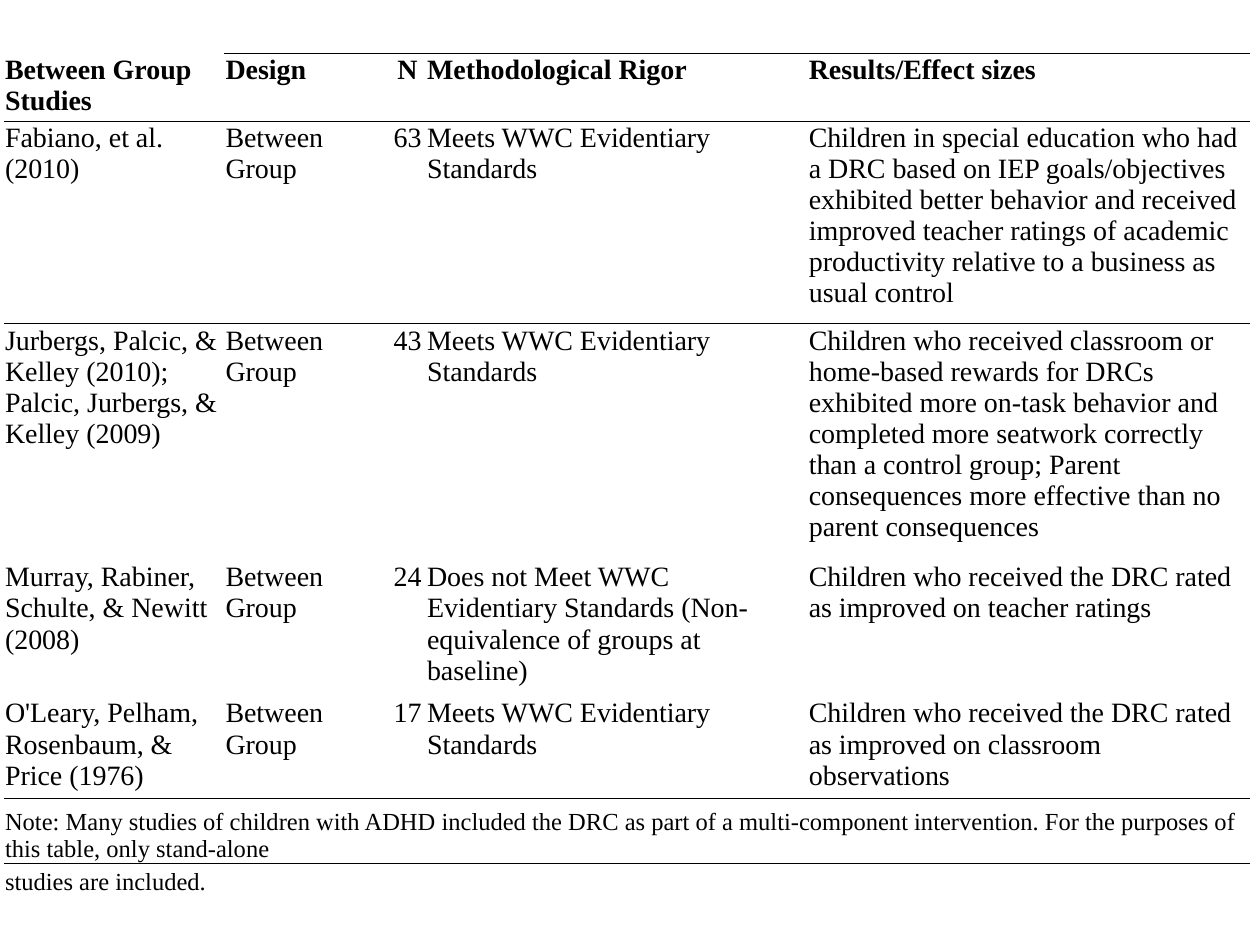
from lxml.etree import SubElement as Sub
from pptx import Presentation
from pptx.dml.color import RGBColor as Rgb
from pptx.enum.text import MSO_ANCHOR as Anchor, PP_ALIGN as Align
from pptx.oxml import parse_xml
from pptx.oxml.ns import nsdecls, qn
from pptx.util import Inches as In, Pt

INK = "000000"
FACE = "Times New Roman"
PLAIN = "{2D5ABB26-0587-4C30-8999-92F81FD0307C}"
COLS = [1.75, 1.31, 0.29, 3.03, 3.51]
ROWS = [0.54, 1.61, 1.88, 1.08, 0.81, 0.51, 0.26]
EDGES = {0: "TB", 1: "T", 4: "B", 5: "T"}
PAD = {"margin_left": In(0.01), "margin_right": In(0.01),
       "margin_top": In(0.01), "margin_bottom": 0}
HEAD = {"name": FACE, "size": Pt(16), "bold": True}
BODY = {**HEAD, "bold": False}
NOTE = {**BODY, "size": Pt(14)}

GROUP = "Between Group"
MEETS = "Meets WWC Evidentiary Standards"
TITLES = ["Between Group Studies", "Design", "N", "Methodological Rigor",
          "Results/Effect sizes"]
STUDIES = [
    ["Fabiano, et al. (2010)", GROUP, "63", MEETS,
     "Children in special education who had a DRC based on IEP "
     "goals/objectives exhibited better behavior and received improved "
     "teacher ratings of academic productivity relative to a business as "
     "usual control"],
    ["Jurbergs, Palcic, & Kelley (2010); Palcic, Jurbergs, & Kelley (2009)",
     GROUP, "43", MEETS,
     "Children who received classroom or home-based rewards for DRCs "
     "exhibited more on-task behavior and completed more seatwork correctly "
     "than a control group; Parent consequences more effective than no "
     "parent consequences"],
    ["Murray, Rabiner, Schulte, & Newitt (2008)", GROUP, "24",
     "Does not Meet WWC Evidentiary Standards (Non-equivalence of groups at "
     "baseline)",
     "Children who received the DRC rated as improved on teacher ratings"],
    ["O'Leary, Pelham, Rosenbaum, & Price (1976)", GROUP, "17", MEETS,
     "Children who received the DRC rated as improved on classroom "
     "observations"],
]
NOTES = [
    ["Note: Many studies of children with ADHD included the DRC as part of a "
     "multi-component intervention. For the purposes of this table, only "
     "stand-alone", "", "", "", ""],
    ["studies are included.", "", "", "", ""],
]


def hue(code):
    """Turn a hex string into a colour."""
    return Rgb.from_string(code)


def put(item, form):
    """Set each attribute of an item from a dict."""
    for key, val in form.items():
        setattr(item, key, val)


def rule(cell, edges):
    """Draw thin lines on the named edges of a cell."""
    props = cell._tc.get_or_add_tcPr()
    for spot, edge in enumerate(edges):
        props.insert(spot, parse_xml(
            f'<a:ln{edge} {nsdecls("a")} w="{Pt(0.5)}"><a:solidFill>'
            f'<a:srgbClr val="{INK}"/></a:solidFill></a:ln{edge}>'))


def write(cell, text, form, align, anchor):
    """Fill a cell with one styled line of text."""
    put(cell, {**PAD, "vertical_anchor": anchor})
    cell.fill.background()
    para = cell.text_frame.paragraphs[0]
    para.alignment = align
    if text:
        run = para.add_run()
        run.text = text
        put(run.font, form)
        run.font.color.rgb = hue(INK)
    else:
        Sub(para._p, qn("a:endParaRPr"), sz=str(int(form["size"].pt * 100)))


def grid(slide, left, top, wide, high):
    """Place the table of studies and its notes in the given box."""
    data = [TITLES, *STUDIES, *NOTES]
    table = slide.shapes.add_table(
        len(ROWS), len(COLS), In(left), In(top), In(wide), In(high)).table
    put(table, {"first_row": False, "horz_banding": False})
    table._tbl.tblPr.find(qn("a:tableStyleId")).text = PLAIN
    for col, part in zip(table.columns, COLS):
        col.width = In(wide * part / sum(COLS))
    for row, part in zip(table.rows, ROWS):
        row.height = In(high * part / sum(ROWS))
    first = 1 + len(STUDIES)
    for i, line in enumerate(data):
        form = HEAD if i == 0 else BODY if i < first else NOTE
        anchor = Anchor.TOP if i < first else Anchor.BOTTOM
        for j, text in enumerate(line):
            cell = table.cell(i, j)
            align = Align.CENTER if j == 2 else Align.LEFT
            write(cell, text, form, align, anchor)
            rule(cell, "B" if i == j == 0 else EDGES.get(i, ""))
    table.cell(first, 0).merge(table.cell(first, len(COLS) - 1))


def main():
    """Build and save the slide."""
    deck = Presentation()
    put(deck, {"slide_width": In(10), "slide_height": In(7.5)})
    slide = deck.slides.add_slide(deck.slide_layouts[6])
    grid(slide, 0.03, 0.42, sum(COLS), sum(ROWS))
    deck.save("out.pptx")


if __name__ == "__main__":
    main()
